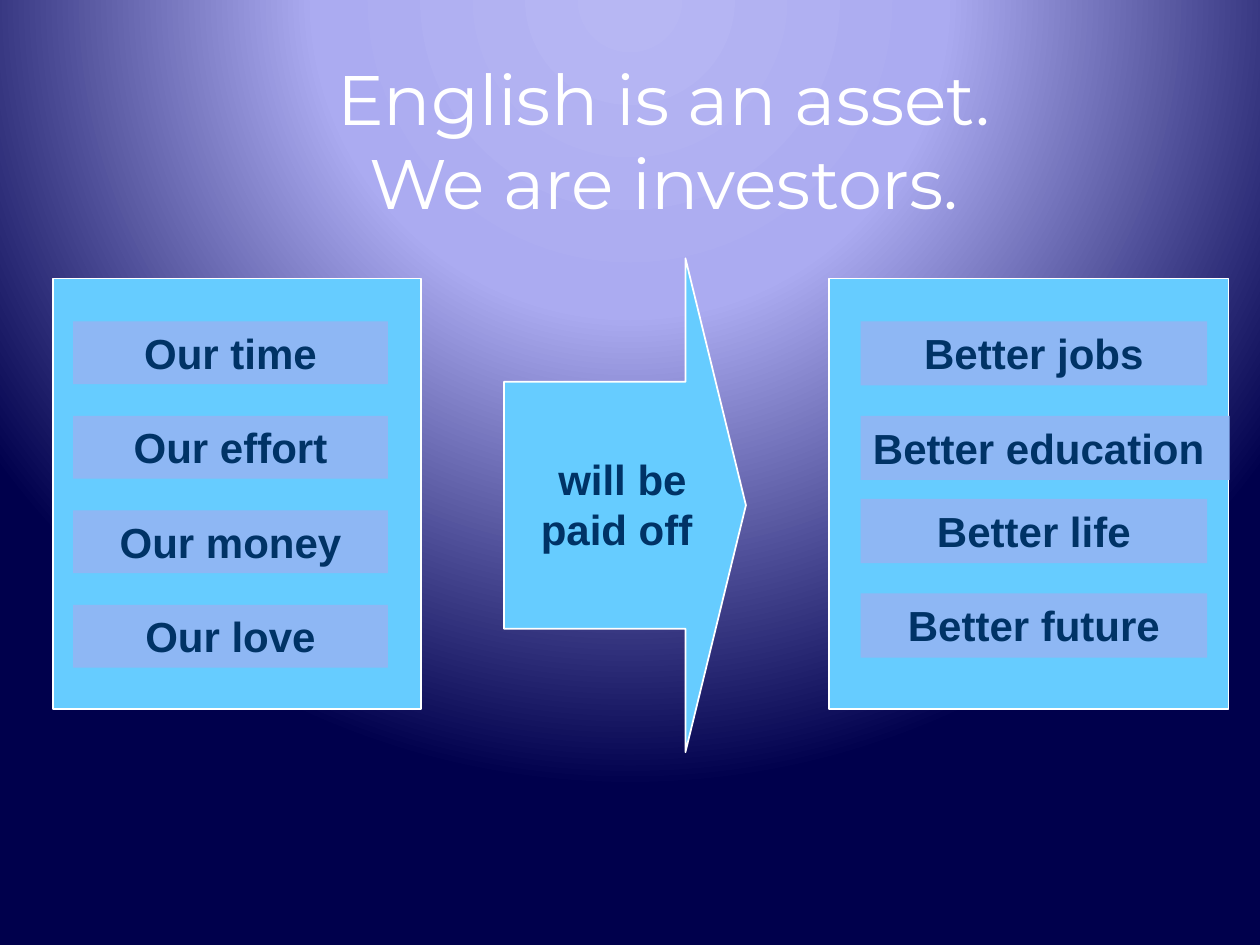
"""Build a slide that shows English study as an investment."""
from pptx import Presentation
from pptx.dml.color import RGBColor
from pptx.enum.shapes import MSO_SHAPE
from pptx.enum.text import MSO_ANCHOR, PP_ALIGN
from pptx.oxml import parse_xml
from pptx.oxml.ns import nsdecls
from pptx.util import Inches, Pt

COLORS = {"panel": "66CCFF", "label": "8EB7F4", "ink": "003366", "white": "FFFFFF",
          "glow": "B7B7F3", "mid": "ABABF1", "night": "00004C"}


def block(kind, box, fill, line=None):
    shape = slide.shapes.add_shape(kind, *map(Inches, box))
    shape.shadow.inherit = False
    shape.fill.solid()
    shape.fill.fore_color.rgb = RGBColor.from_string(COLORS[fill])
    if line:
        shape.line.color.rgb = RGBColor.from_string(COLORS[line])
        shape.line.width = Pt(1)
    else:
        shape.line.fill.background()
    return shape


def write(shape, text, size=24, face="Arial", color="ink", bold=True, align=PP_ALIGN.CENTER):
    frame = shape.text_frame
    frame.word_wrap = True
    frame.vertical_anchor = MSO_ANCHOR.TOP
    frame.text = text
    for para in frame.paragraphs:
        para.alignment = align
        for run in para.runs:
            run.font.size = Pt(size)
            run.font.name = face
            run.font.bold = bold
            run.font.color.rgb = RGBColor.from_string(COLORS[color])


deck = Presentation()
deck.slide_width, deck.slide_height = Inches(10), Inches(7.5)
slide = deck.slides.add_slide(deck.slide_layouts[6])

stops = "".join(f'<a:gs pos="{pos * 1000}"><a:srgbClr val="{COLORS[name]}"/></a:gs>'
                for pos, name in ((0, "glow"), (40, "mid"), (100, "night")))
slide.element.cSld.insert(0, parse_xml(
    f'<p:bg {nsdecls("p", "a")}><p:bgPr><a:gradFill rotWithShape="0"><a:gsLst>{stops}</a:gsLst>'
    '<a:path path="circle"><a:fillToRect l="50000" t="-80000" r="50000" b="180000"/></a:path>'
    '</a:gradFill><a:effectLst/></p:bgPr></p:bg>'))

block(MSO_SHAPE.RECTANGLE, (0.42, 2.21, 2.92, 3.42), "panel", "white")
for row, text in enumerate(("Our time", "Our effort", "Our money", "Our love")):
    write(block(MSO_SHAPE.RECTANGLE, (0.58, 2.55 + 0.75 * row, 2.5, 0.5), "label"), text)

arrow = block(MSO_SHAPE.RIGHT_ARROW, (4, 2.05, 1.92, 3.92), "panel", "white")
arrow.adjustments[0], arrow.adjustments[1] = 0.5, 0.25
write(slide.shapes.add_textbox(*map(Inches, (4, 3.55, 1.88, 0.91))), "will be paid off ")

block(MSO_SHAPE.RECTANGLE, (6.58, 2.21, 3.17, 3.42), "panel", "white")
gains = (("Better jobs", 2.55, 2.75, PP_ALIGN.CENTER),
         ("Better education", 3.3, 2.93, PP_ALIGN.LEFT),
         ("Better life", 3.96, 2.75, PP_ALIGN.CENTER),
         ("Better future", 4.71, 2.75, PP_ALIGN.CENTER))
for text, top, width, align in gains:
    write(block(MSO_SHAPE.RECTANGLE, (6.83, top, width, 0.51), "label"), text, align=align)

title = slide.shapes.add_textbox(*map(Inches, (1.02, 0.39, 8.5, 0.92)))
write(title, "English is an asset.\vWe are investors.", 40, "Montserrat", "white", False)

deck.save("out.pptx")
